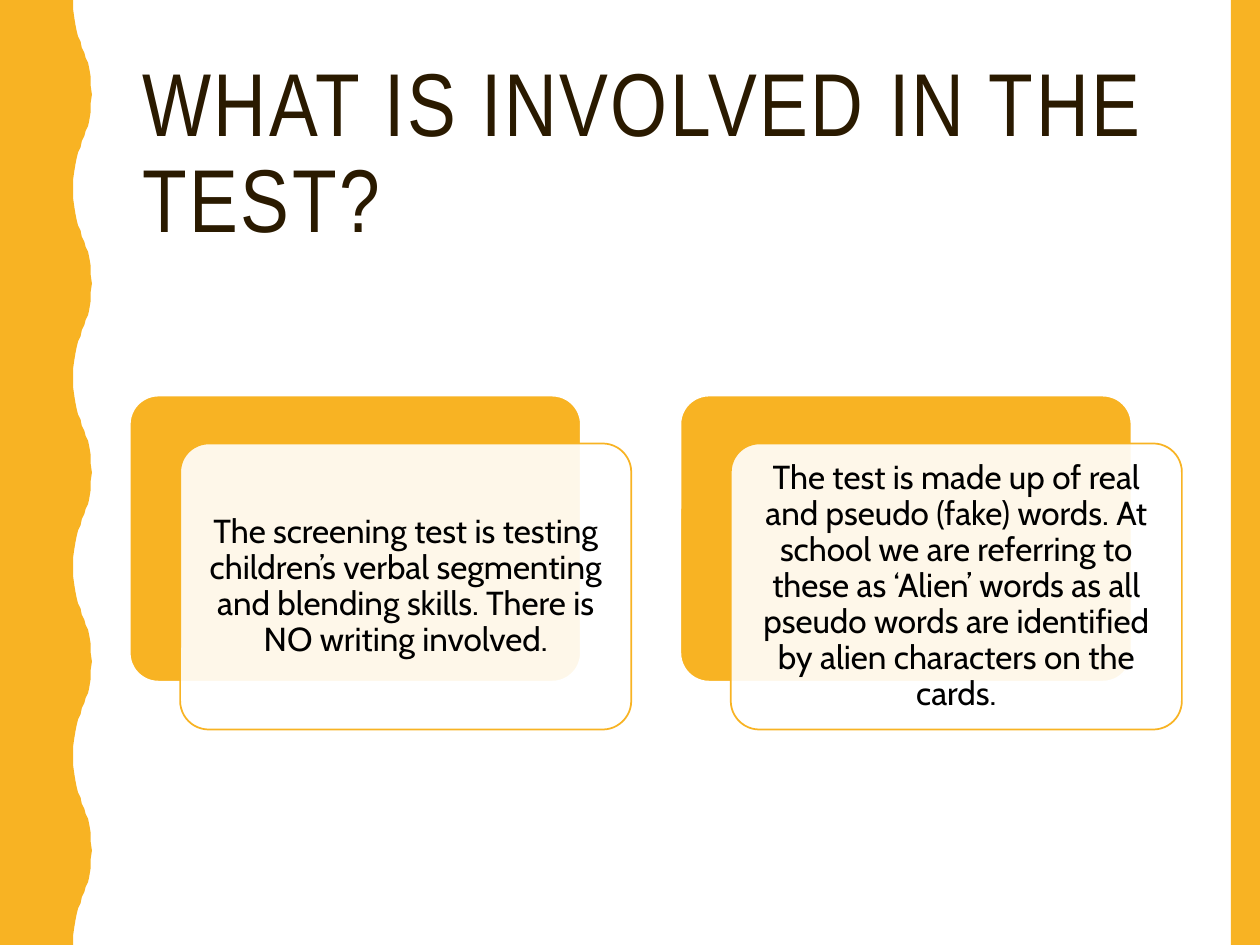
from pptx import Presentation
from pptx import util as u
from pptx.dml.color import RGBColor
from pptx.enum import shapes, text
from pptx.oxml.ns import qn
from lxml import etree

GOLD, DARK, WHITE, BLACK = "F8B323", "2A1A00", "FFFFFF", "000000"
TITLE = "WHAT IS INVOLVED IN THE TEST?"
CARDS = [
    "The screening test is testing children’s verbal segmenting and blending "
    "skills. There is NO writing involved.",
    "The test is made up of real and pseudo (fake) words. At school we are "
    "referring to these as ‘Alien’ words as all pseudo words are identified "
    "by alien characters on the cards.",
]
# One swell of the wave, trough to crest: (x, y) in hundredths of an inch
SWELL = [(58, 0), (58, 7), (59, 14), (60, 20), (61, 25), (62, 29), (64, 33),
         (65, 38), (67, 42), (68, 46), (70, 50), (71, 55), (72, 61), (72, 68),
         (73, 75)]


def rgb(code):
    return RGBColor.from_string(code)


def box(*sides):
    return [u.Inches(side) for side in sides]


def paint(shape, fill, line=None, alpha=None):
    shape.shadow.inherit = False
    shape.fill.solid()
    shape.fill.fore_color.rgb = rgb(fill)
    if alpha:
        color = shape.fill._xPr.find(qn("a:solidFill"))[0]
        etree.SubElement(color, qn("a:alpha"), val=str(alpha * 1000))
    if line:
        shape.line.color.rgb = rgb(line)
        shape.line.width = u.Pt(1)
    else:
        shape.line.fill.background()


def write(shape, words, font, size, color, align, inset=(0.1, 0.05), track=0):
    frame = shape.text_frame
    frame.word_wrap = True
    frame.auto_size = text.MSO_AUTO_SIZE.NONE
    frame.vertical_anchor = text.MSO_ANCHOR.MIDDLE
    frame.margin_left = frame.margin_right = u.Inches(inset[0])
    frame.margin_top = frame.margin_bottom = u.Inches(inset[1])
    para = frame.paragraphs[0]
    para.alignment = align
    para.line_spacing = 0.9
    run = para.add_run()
    run.text = words
    run.font.name = font
    run.font.size = u.Pt(size)
    run.font.color.rgb = rgb(color)
    if track:
        run.font._element.set("spc", str(int(track * 100)))


def head(slide, left, top, width, height):
    title = slide.shapes.title
    title.left, title.top, title.width, title.height = box(
        left, top, width, height)
    write(title, TITLE, "Arial Narrow", 51, DARK, text.PP_ALIGN.LEFT,
          track=1.5)


def wave(slide, count=5):
    """Draw the left band, whose right edge repeats one swell and its mirror."""
    swell = SWELL + [(x, 150 - y) for x, y in SWELL[-2::-1]]
    edge = [(x, y + 150 * i) for i in range(count) for x, y in swell]
    form = slide.shapes.build_freeform(0, 0, scale=u.Inches(0.01))
    form.add_line_segments(edge + [(0, 150 * count)], close=True)
    paint(form.convert_to_shape(), GOLD)


def band(slide, left, top, width, height):
    bar = slide.shapes.add_shape(shapes.MSO_SHAPE.RECTANGLE,
                                 *box(left, top, width, height))
    paint(bar, GOLD)


def card(slide, words, left, top, width, height):
    """Stack a clear panel with text over a gold one, set off down and right."""
    wide, high = width - 0.4, height - 0.38
    panels = [(left, top, GOLD, WHITE, None),
              (left + 0.4, top + 0.38, WHITE, GOLD, 90)]
    for x, y, fill, line, alpha in panels:
        panel = slide.shapes.add_shape(shapes.MSO_SHAPE.ROUNDED_RECTANGLE,
                                       *box(x, y, wide, high))
        panel.adjustments[0] = 0.1
        paint(panel, fill, line, alpha)
    pad = 0.06
    label = slide.shapes.add_textbox(
        *box(x + pad, y + pad, wide - 2 * pad, high - 2 * pad))
    write(label, words, "Cabin", 19, BLACK, text.PP_ALIGN.CENTER,
          inset=(0.08, 0.08))


def main():
    deck = Presentation()
    deck.slide_width, deck.slide_height = box(10, 7.5)
    slide = deck.slides.add_slide(deck.slide_layouts[5])
    head(slide, 1.03, 0.42, 8.35, 1.63)
    wave(slide)
    band(slide, 9.77, 0, 0.23, 7.5)
    for i, words in enumerate(CARDS):
        card(slide, words, 1.03 + 4.37 * i, 3.14, 3.98, 2.65)
    deck.save("out.pptx")


if __name__ == "__main__":
    main()
